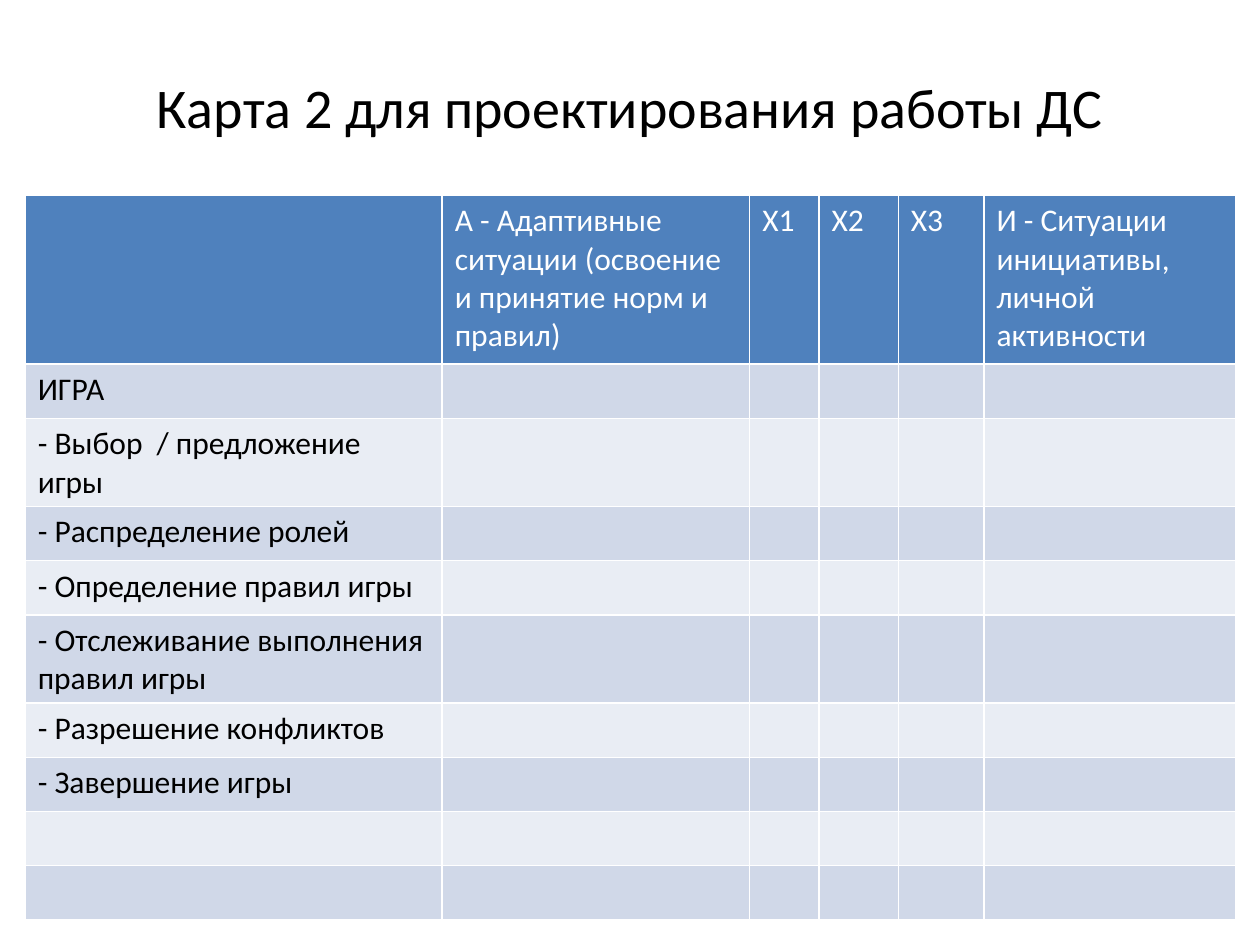
from dataclasses import dataclass

from pptx import Presentation
from pptx.dml.color import RGBColor
from pptx.enum.text import MSO_ANCHOR, PP_ALIGN
from pptx.slide import Slide
from pptx.table import _Cell
from pptx.text.text import TextFrame
from pptx.util import Inches, Pt

FONT = "Calibri"
BLACK = "000000"
WHITE = "FFFFFF"
HEADER_FILL = "4F81BD"
BAND_FILLS = ("D0D8E8", "E9EDF4")
COLUMN_WIDTHS = (3.31, 2.44, 0.55, 0.63, 0.68, 2.0)
HEADER_HEIGHT = 1.34
ROW_HEIGHT = 0.43
EMPTY_ROWS = 2
HEADINGS = (
    "",
    "А - Адаптивные ситуации (освоение и принятие норм и правил)",
    "Х1",
    "Х2",
    "Х3",
    "И - Ситуации инициативы, личной активности",
)
GAME_STAGES = (
    "ИГРА",
    "- Выбор  / предложение игры",
    "- Распределение ролей",
    "- Определение правил игры",
    "- Отслеживание выполнения правил игры",
    "- Разрешение конфликтов",
    "- Завершение игры",
)


@dataclass(frozen=True)
class TableRow:
    texts: tuple[str, ...]
    height: float
    fill: str
    text_color: str


def hex_color(value: str) -> RGBColor:
    return RGBColor.from_string(value)


def write_text(text_frame: TextFrame, text: str, size: int, color: str) -> None:
    text_frame.text = text
    for paragraph in text_frame.paragraphs:
        for run in paragraph.runs:
            run.font.name = FONT
            run.font.size = Pt(size)
            run.font.bold = False
            run.font.color.rgb = hex_color(color)


def add_title(slide: Slide, text: str) -> None:
    shape = slide.shapes.add_textbox(Inches(0.5), Inches(0.3), Inches(9), Inches(1.09))
    text_frame = shape.text_frame
    text_frame.word_wrap = True
    text_frame.vertical_anchor = MSO_ANCHOR.MIDDLE
    write_text(text_frame, text, 32, BLACK)
    text_frame.paragraphs[0].alignment = PP_ALIGN.CENTER


def planning_rows() -> list[TableRow]:
    rows = [TableRow(HEADINGS, HEADER_HEIGHT, HEADER_FILL, WHITE)]
    blank_cells = ("",) * (len(HEADINGS) - 1)
    for index, stage in enumerate(GAME_STAGES + ("",) * EMPTY_ROWS):
        fill = BAND_FILLS[index % len(BAND_FILLS)]
        rows.append(TableRow((stage, *blank_cells), ROW_HEIGHT, fill, BLACK))
    return rows


def fill_cell(cell: _Cell, text: str, row: TableRow) -> None:
    cell.fill.solid()
    cell.fill.fore_color.rgb = hex_color(row.fill)
    if text:
        write_text(cell.text_frame, text, 18, row.text_color)


def add_planning_table(slide: Slide, rows: list[TableRow]) -> None:
    table = slide.shapes.add_table(
        len(rows),
        len(COLUMN_WIDTHS),
        Inches(0.2),
        Inches(1.55),
        Inches(sum(COLUMN_WIDTHS)),
        Inches(sum(row.height for row in rows)),
    ).table
    for column, width in zip(table.columns, COLUMN_WIDTHS):
        column.width = Inches(width)
    for table_row, row in zip(table.rows, rows):
        table_row.height = Inches(row.height)
        for cell, text in zip(table_row.cells, row.texts):
            fill_cell(cell, text, row)


def main() -> None:
    presentation = Presentation()
    presentation.slide_width = Inches(10)
    presentation.slide_height = Inches(7.5)
    slide = presentation.slides.add_slide(presentation.slide_layouts[6])
    add_title(slide, "Карта 2 для проектирования работы ДС")
    add_planning_table(slide, planning_rows())
    presentation.save("out.pptx")


if __name__ == "__main__":
    main()
